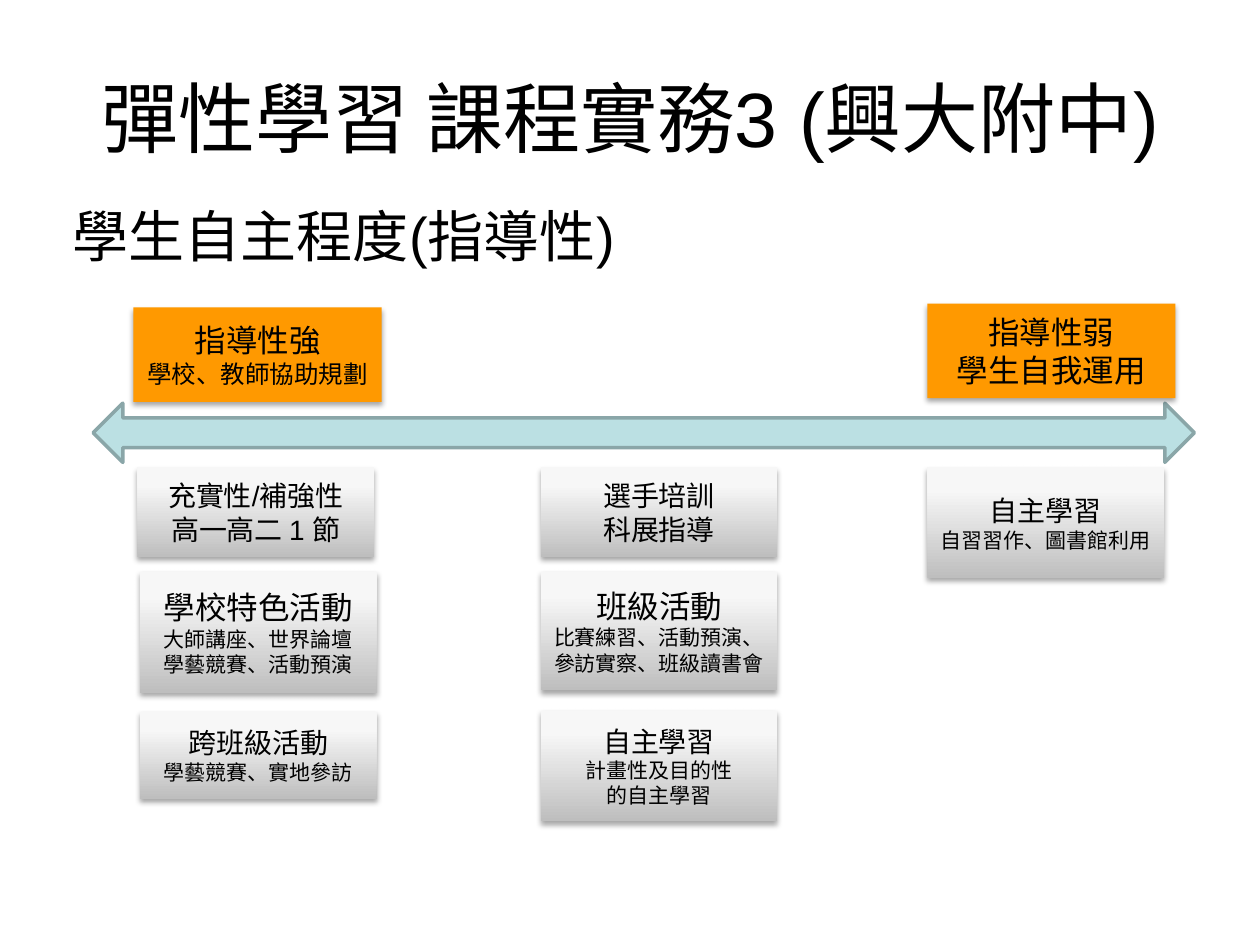
import copy
import pptx
import pptx.util
import pptx.dml.color
import pptx.enum.shapes
import pptx.enum.text
import pptx.oxml
import pptx.oxml.ns

PX = 9144
FONT = "Arial"
SHADOW = (
    '<a:outerShdw xmlns:a="http://schemas.openxmlformats.org/drawingml/2006/main" '
    'blurRad="40000" dist="23000" dir="5400000" rotWithShape="0">'
    '<a:srgbClr val="000000"><a:alpha val="35000"/></a:srgbClr></a:outerShdw>'
)
STOPS = [(0, "BEBEBE"), (0.8, "F7F7F7"), (1, "F8F8F8")]
MID = pptx.enum.text.PP_ALIGN.CENTER
LEFT = pptx.enum.text.PP_ALIGN.LEFT
KIND = pptx.enum.shapes.MSO_SHAPE


def color(code):
    return pptx.dml.color.RGBColor.from_string(code)


def emu(box):
    return [pptx.util.Emu(n * PX) for n in box]


def write(frame, lines, align=MID):
    frame.word_wrap = True
    frame.text = "\n".join(text for text, size in lines)
    for para, (text, size) in zip(frame.paragraphs, lines):
        para.alignment = align
        for run in para.runs:
            run.font.name = FONT
            run.font.size = pptx.util.Pt(size)
            run.font.color.rgb = color("000000")


def shade(fill):
    fill.gradient()
    fill.gradient_angle = 90
    first = fill.gradient_stops[0]
    node = first._gs
    node.addnext(copy.deepcopy(node))
    for stop, (place, code) in zip(fill.gradient_stops, STOPS):
        stop.position = place
        stop.color.rgb = color(code)


def card(slide, box, lines, fill=None):
    shape = slide.shapes.add_shape(KIND.RECTANGLE, *emu(box))
    if fill:
        shape.fill.solid()
        shape.fill.fore_color.rgb = color(fill)
    else:
        shade(shape.fill)
    shape.line.fill.background()
    shape.shadow.inherit = False
    effect = shape._element.spPr.find(pptx.oxml.ns.qn("a:effectLst"))
    effect.append(pptx.oxml.parse_xml(SHADOW))
    shape.text_frame.vertical_anchor = pptx.enum.text.MSO_ANCHOR.MIDDLE
    write(shape.text_frame, lines)


def head(slide, box):
    left, top, width, height = box
    title = slide.shapes.title
    title.left, title.top, title.width, title.height = emu((left, top, width, 125))
    title.text_frame.vertical_anchor = pptx.enum.text.MSO_ANCHOR.MIDDLE
    write(title.text_frame, [("彈性學習 課程實務3 (興大附中)", 44)])
    note = slide.shapes.add_textbox(*emu((left - 2, top + 125, width, height - 125)))
    write(note.text_frame, [("學生自主程度(指導性)", 32)], LEFT)


def scale(slide, box):
    left, top, width, height = box
    arrow = slide.shapes.add_shape(KIND.LEFT_RIGHT_ARROW, *emu((left, top + 79, width, 47)))
    arrow.shadow.inherit = False
    arrow.fill.solid()
    arrow.fill.fore_color.rgb = color("BBE0E3")
    arrow.line.color.rgb = color("8AA6A8")
    arrow.line.width = pptx.util.Pt(2)
    ends = [
        (32, 3, [("指導性強", 18), ("學校、教師協助規劃", 14)]),
        (662, 0, [("指導性弱", 18), ("學生自我運用", 18)]),
    ]
    for x, y, lines in ends:
        card(slide, (left + x, top + y, 197, 75), lines, "FF9900")


def column(slide, box, cards):
    left, top, width, height = box
    for x, y, tall, lines in cards:
        card(slide, (left + x, top + y, width, tall), lines)


def main():
    deck = pptx.Presentation()
    deck.slide_width, deck.slide_height = emu((1000, 750))
    slide = deck.slides.add_slide(deck.slide_layouts[5])
    head(slide, (50, 30, 900, 191))
    scale(slide, (74, 241, 874, 126))
    groups = [
        (109, [
            (0, 0, 71, [("充實性/補強性", 16), ("高一高二 1 節", 16)]),
            (2, 83, 96, [("學校特色活動", 18), ("大師講座、世界論壇", 12), ("學藝競賽、活動預演", 12)]),
            (2, 194, 69, [("跨班級活動", 16), ("學藝競賽、實地參訪", 12)]),
        ]),
        (429, [
            (0, 0, 71, [("選手培訓", 16), ("科展指導", 16)]),
            (0, 83, 94, [("班級活動", 18), ("比賽練習、活動預演、參訪實察、班級讀書會", 12)]),
            (0, 193, 88, [("自主學習", 16), ("計畫性及目的性", 12), ("的自主學習", 12)]),
        ]),
        (736, [
            (0, 0, 88, [("自主學習", 16), ("自習習作、圖書館利用", 12)]),
        ]),
    ]
    for left, cards in groups:
        column(slide, (left, 371, 188, 281), cards)
    deck.save("out.pptx")


if __name__ == "__main__":
    main()
